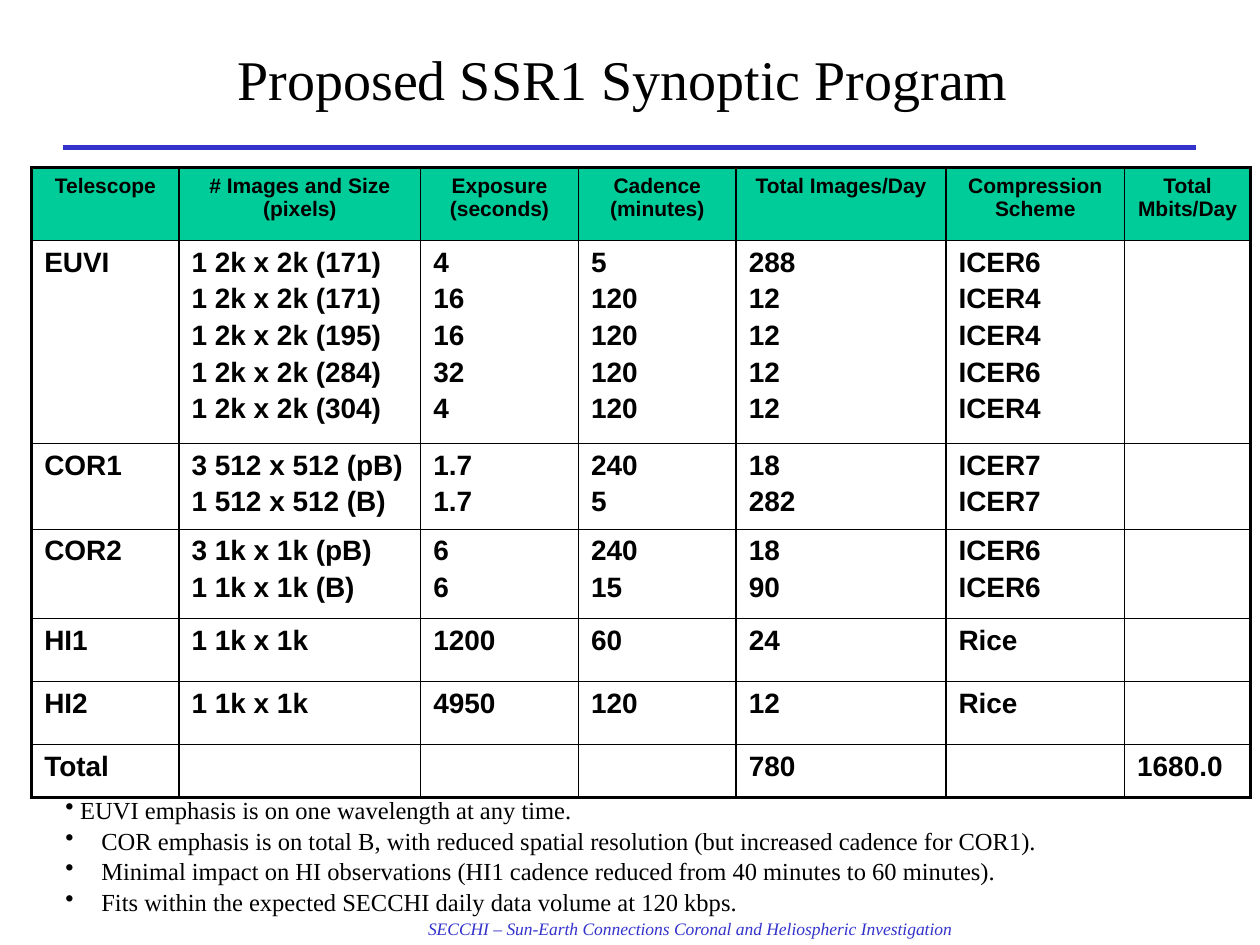
"""Build the slide on the proposed SSR1 synoptic program."""
from dataclasses import dataclass

from lxml import etree
from pptx import Presentation
from pptx.dml.color import RGBColor
from pptx.enum.shapes import MSO_CONNECTOR
from pptx.enum.text import MSO_ANCHOR, PP_ALIGN
from pptx.oxml.ns import qn
from pptx.util import Cm, Pt

CENTER, LEFT = PP_ALIGN.CENTER, PP_ALIGN.LEFT
TOP = MSO_ANCHOR.TOP
STRAIGHT = MSO_CONNECTOR.STRAIGHT
SERIF, SANS = "Times New Roman", "Arial"
BLACK, BLUE, GREEN = "000000", "3333CC", "00CC99"
OUTER, INNER = 2.25, 1


@dataclass(frozen=True)
class TextStyle:
    font: str
    size: float
    color: str = BLACK
    bold: bool = False
    italic: bool = False
    align: PP_ALIGN = LEFT


@dataclass(frozen=True)
class TableRow:
    height: float
    cells: tuple


@dataclass(frozen=True)
class Bullet:
    text: str
    level: int
    indent: float


TITLE = TextStyle(SERIF, 32, align=CENTER)
HEADER = TextStyle(SANS, 12, bold=True, align=CENTER)
BODY = TextStyle(SANS, 16, bold=True)
NOTE = TextStyle(SERIF, 14)
FOOTER = TextStyle(SERIF, 10, BLUE, italic=True)

COLUMN_WIDTHS = (2.97, 4.87, 3.18, 3.18, 4.23, 3.6, 2.54)
ROWS = (
    TableRow(1.47, ("Telescope", "# Images and Size (pixels)", "Exposure (seconds)",
                    "Cadence (minutes)", "Total Images/Day", "Compression Scheme",
                    "Total Mbits/Day")),
    TableRow(4.09, ("EUVI",
                    "1 2k x 2k (171)\n1 2k x 2k (171)\n1 2k x 2k (195)\n"
                    "1 2k x 2k (284)\n1 2k x 2k (304)",
                    "4\n16\n16\n32\n4", "5\n120\n120\n120\n120",
                    "288\n12\n12\n12\n12", "ICER6\nICER4\nICER4\nICER6\nICER4", "")),
    TableRow(1.73, ("COR1", "3 512 x 512 (pB)\n1 512 x 512 (B)", "1.7\n1.7",
                    "240\n5", "18\n282", "ICER7\nICER7", "")),
    TableRow(1.8, ("COR2", "3 1k x 1k (pB)\n1 1k x 1k (B)", "6\n6",
                   "240\n15", "18\n90", "ICER6\nICER6", "")),
    TableRow(1.27, ("HI1", "1 1k x 1k", "1200", "60", "24", "Rice", "")),
    TableRow(1.27, ("HI2", "1 1k x 1k", "4950", "120", "12", "Rice", "")),
    TableRow(1.07, ("Total", "", "", "", "780", "", "1680.0")),
)
BULLETS = (
    Bullet(" EUVI emphasis is on one wavelength at any time.", 1, 0),
    Bullet(" COR emphasis is on total B, with reduced spatial resolution "
           "(but increased cadence for COR1).", 0, 0.6),
    Bullet(" Minimal impact on HI observations "
           "(HI1 cadence reduced from 40 minutes to 60 minutes).", 0, 0.6),
    Bullet(" Fits within the expected SECCHI daily data volume at 120 kbps.", 0, 0.6),
)


def rgb(color: str) -> RGBColor:
    return RGBColor.from_string(color)


def write(paragraph, text: str, style: TextStyle) -> None:
    paragraph.alignment = style.align
    run = paragraph.add_run()
    run.text = text
    run.font.name = style.font
    run.font.size = Pt(style.size)
    run.font.bold = style.bold
    run.font.italic = style.italic
    run.font.color.rgb = rgb(style.color)


def add_title(slide, text: str) -> None:
    title = slide.shapes.title
    title.left, title.top, title.width, title.height = Cm(1.27), Cm(0.76), Cm(22.86), Cm(3.18)
    title.text_frame.vertical_anchor = TOP
    write(title.text_frame.paragraphs[0], text, TITLE)


def add_rule(slide) -> None:
    rule = slide.shapes.add_connector(STRAIGHT, Cm(1.27), Cm(2.97), Cm(24.1), Cm(2.97))
    rule.line.color.rgb = rgb(BLUE)
    rule.line.width = Pt(3)
    etree.SubElement(rule._element.spPr, qn("a:effectLst"))


def set_borders(cell, widths: dict) -> None:
    properties = cell._tc.get_or_add_tcPr()
    for index, (side, width) in enumerate(widths.items()):
        line = etree.Element(qn(f"a:ln{side}"), w=str(Pt(width)))
        fill = etree.SubElement(line, qn("a:solidFill"))
        etree.SubElement(fill, qn("a:srgbClr"), val=BLACK)
        properties.insert(index, line)


def fill_cell(cell, text: str, style: TextStyle) -> None:
    frame = cell.text_frame
    for index, line in enumerate(text.split("\n") if text else ()):
        paragraph = frame.add_paragraph() if index else frame.paragraphs[0]
        if index:
            paragraph.space_before = Pt(0.2 * style.size)
        write(paragraph, line, style)


def add_program_table(slide) -> None:
    last_row, last_column = len(ROWS) - 1, len(COLUMN_WIDTHS) - 1
    table = slide.shapes.add_table(
        len(ROWS), len(COLUMN_WIDTHS), Cm(0.64), Cm(3.38),
        Cm(sum(COLUMN_WIDTHS)), Cm(sum(row.height for row in ROWS))).table
    table.first_row = table.horz_banding = False
    for column, width in zip(table.columns, COLUMN_WIDTHS):
        column.width = Cm(width)
    for row_index, row in enumerate(ROWS):
        table.rows[row_index].height = Cm(row.height)
        for column_index, text in enumerate(row.cells):
            cell = table.cell(row_index, column_index)
            if row_index == 0:
                cell.fill.solid()
                cell.fill.fore_color.rgb = rgb(GREEN)
            else:
                cell.fill.background()
            fill_cell(cell, text, BODY if row_index else HEADER)
            set_borders(cell, {
                "L": INNER if column_index else OUTER,
                "R": OUTER if column_index == last_column else INNER,
                "T": INNER if row_index else OUTER,
                "B": OUTER if row_index == last_row else INNER,
            })


def add_bullets(slide) -> None:
    frame = slide.shapes.add_textbox(Cm(1.07), Cm(15.88), Cm(23.7), Cm(2.64)).text_frame
    frame.word_wrap = True
    for index, bullet in enumerate(BULLETS):
        paragraph = frame.add_paragraph() if index else frame.paragraphs[0]
        paragraph.level = bullet.level
        paragraph.line_spacing = 1.04
        properties = paragraph._p.get_or_add_pPr()
        properties.set("marL", str(Cm(bullet.indent)))
        properties.set("indent", str(-Cm(bullet.indent)))
        etree.SubElement(properties, qn("a:buChar"), char="•")
        write(paragraph, bullet.text, NOTE)


def add_footer(slide, text: str) -> None:
    frame = slide.shapes.add_textbox(Cm(8.38), Cm(18.39), Cm(11.13), Cm(0.66)).text_frame
    frame.word_wrap = False
    write(frame.paragraphs[0], text, FOOTER)


def main() -> None:
    presentation = Presentation()
    presentation.slide_width, presentation.slide_height = Cm(25.4), Cm(19.05)
    slide = presentation.slides.add_slide(presentation.slide_layouts[5])
    add_footer(slide, "SECCHI – Sun-Earth Connections Coronal and Heliospheric Investigation")
    add_rule(slide)
    add_program_table(slide)
    add_title(slide, "Proposed SSR1 Synoptic Program ")
    add_bullets(slide)
    presentation.save("out.pptx")


if __name__ == "__main__":
    main()
